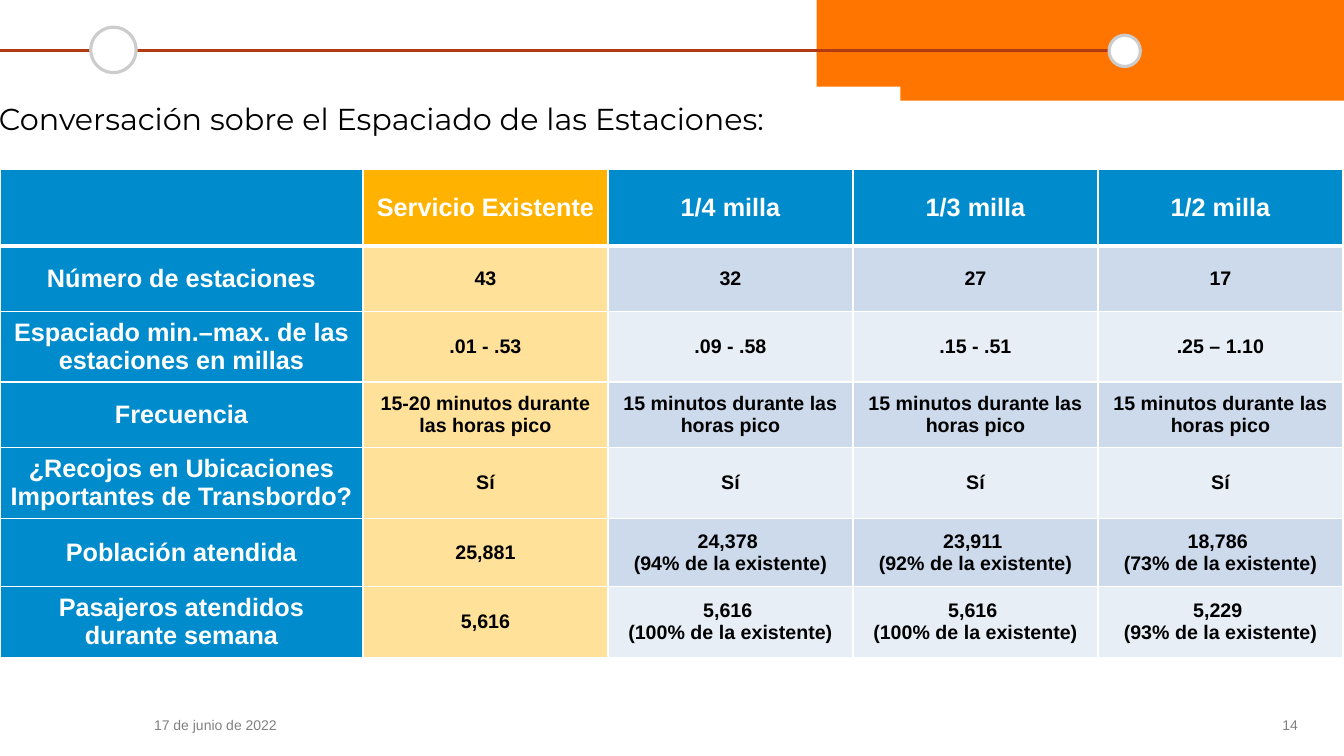
from lxml import etree
from pptx import Presentation
from pptx import util as u
from pptx.dml.color import RGBColor
from pptx.enum import shapes, text
from pptx.oxml.ns import qn

# Content
TITLE = "Conversación sobre el Espaciado de las Estaciones:"
DATE, PAGE = "17 de junio de 2022", "14"
PEAK = "15 minutos durante las horas pico"
ROWS = [
    ("", "Servicio Existente", "1/4 milla", "1/3 milla", "1/2 milla"),
    ("Número de estaciones", "43", "32", "27", "17"),
    ("Espaciado min.–max. de las estaciones en millas",
     ".01 - .53", ".09 - .58", ".15 - .51", ".25 – 1.10"),
    ("Frecuencia", "15-20 minutos durante las horas pico", PEAK, PEAK, PEAK),
    ("¿Recojos en Ubicaciones Importantes de Transbordo?", "Sí", "Sí", "Sí", "Sí"),
    ("Población atendida", "25,881", "24,378 \n(94% de la existente)",
     "23,911 \n(92% de la existente)", "18,786 \n(73% de la existente)"),
    ("Pasajeros atendidos durante semana", "5,616", "5,616 \n(100% de la existente)",
     "5,616 \n(100% de la existente)", "5,229 \n(93% de la existente)"),
]
COL_WIDTHS = [360] + [243] * 4
ROW_HEIGHTS = [76] + [65] * 4 + [68, 65]
C = {
    "white": "FFFFFF", "black": "000000", "gray": "808080", "ring": "CCCCCC",
    "orange": "FF7500", "rust": "B23A12", "blue": "008CCC",
    "amber": "FFB300", "cream": "FFE199", "band": "CCDAEC", "pale": "E7EEF6",
}
PX = 9144  # 100 px to the inch


def px(*lengths):
    return [u.Emu(n * PX) for n in lengths]


def rgb(name):
    return RGBColor.from_string(C[name])


def write(tf, words, font="Arial", size=14, color="black", bold=False,
          align=text.PP_ALIGN.CENTER, spacing=None):
    for i, line in enumerate(words.split("\n")):
        p = tf.paragraphs[0] if i == 0 else tf.add_paragraph()
        p.alignment = align
        if spacing:
            p.line_spacing = spacing
        p.font.name, p.font.size, p.font.bold = font, u.Pt(size), bold
        p.font.color.rgb = rgb(color)
        if line:
            r = p.add_run()
            r.text = line
            r.font.name, r.font.size, r.font.bold = font, u.Pt(size), bold
            r.font.color.rgb = rgb(color)


def add_shape(kind, box, fill, line=None):
    sp = s.shapes.add_shape(kind, *px(*box))
    sp.shadow.inherit = False
    sp.fill.solid()
    sp.fill.fore_color.rgb = rgb(fill)
    if line:
        sp.line.color.rgb = rgb(line)
        sp.line.width = u.Pt(2.25)
    else:
        sp.line.fill.background()
    return sp


def add_border(cell, side, points):
    ln = etree.SubElement(cell._tc.get_or_add_tcPr(), qn("a:" + side),
                          w=str(u.Pt(points)))
    fill = etree.SubElement(ln, qn("a:solidFill"))
    etree.SubElement(fill, qn("a:srgbClr"), val=C["white"])


def cell_fill(row, col):
    if col == 1:
        return "cream" if row else "amber"
    if row == 0 or col == 0:
        return "blue"
    return "band" if row % 2 else "pale"


prs = Presentation()
prs.slide_width, prs.slide_height = px(1333, 750)
s = prs.slides.add_slide(prs.slide_layouts[6])

# Header band with its track and two stops
RECT, OVAL = shapes.MSO_SHAPE.RECTANGLE, shapes.MSO_SHAPE.OVAL
add_shape(RECT, (810, 0, 523, 100), "orange")
track = s.shapes.add_connector(shapes.MSO_CONNECTOR.STRAIGHT, *px(0, 50, 1100, 50))
track.line.color.rgb = rgb("rust")
track.line.width = u.Pt(2.25)
etree.SubElement(track._element.spPr, qn("a:effectLst"))
add_shape(OVAL, (1100, 35, 31, 31), "white", "ring")
add_shape(OVAL, (90, 27, 45, 45), "white", "ring")

# Footer
for words, box, align in [
    (DATE, (143, 699, 182, 40), text.PP_ALIGN.LEFT),
    (PAGE, (1257, 699, 45, 40), text.PP_ALIGN.CENTER),
]:
    tf = s.shapes.add_textbox(*px(*box)).text_frame
    tf.word_wrap = True
    tf.vertical_anchor = text.MSO_ANCHOR.MIDDLE
    write(tf, words, size=10, color="gray", align=align)

# Title on a white panel that overlaps the band
tf = add_shape(RECT, (-11, 86, 904, 67), "white").text_frame
tf.word_wrap = True
tf.vertical_anchor = text.MSO_ANCHOR.MIDDLE
write(tf, TITLE, font="Montserrat", size=21.6, align=text.PP_ALIGN.LEFT, spacing=0.9)

# Comparison table
table = s.shapes.add_table(len(ROWS), len(COL_WIDTHS),
                           *px(0, 168, sum(COL_WIDTHS), sum(ROW_HEIGHTS))).table
table.horz_banding = False
for column, width in zip(table.columns, px(*COL_WIDTHS)):
    column.width = width
for row, height in zip(table.rows, px(*ROW_HEIGHTS)):
    row.height = height
for i, row in enumerate(ROWS):
    for j, words in enumerate(row):
        cell = table.cell(i, j)
        heading = i == 0 or j == 0
        cell.vertical_anchor = text.MSO_ANCHOR.MIDDLE
        write(cell.text_frame, words, bold=True, size=18 if heading else 14,
              color="white" if heading else "black")
        for side, points in [("lnL", 1), ("lnR", 1), ("lnT", 3 if i == 1 else 1),
                             ("lnB", 3 if i == 0 else 1)]:
            add_border(cell, side, points)
        cell.fill.solid()
        cell.fill.fore_color.rgb = rgb(cell_fill(i, j))

prs.save("out.pptx")
